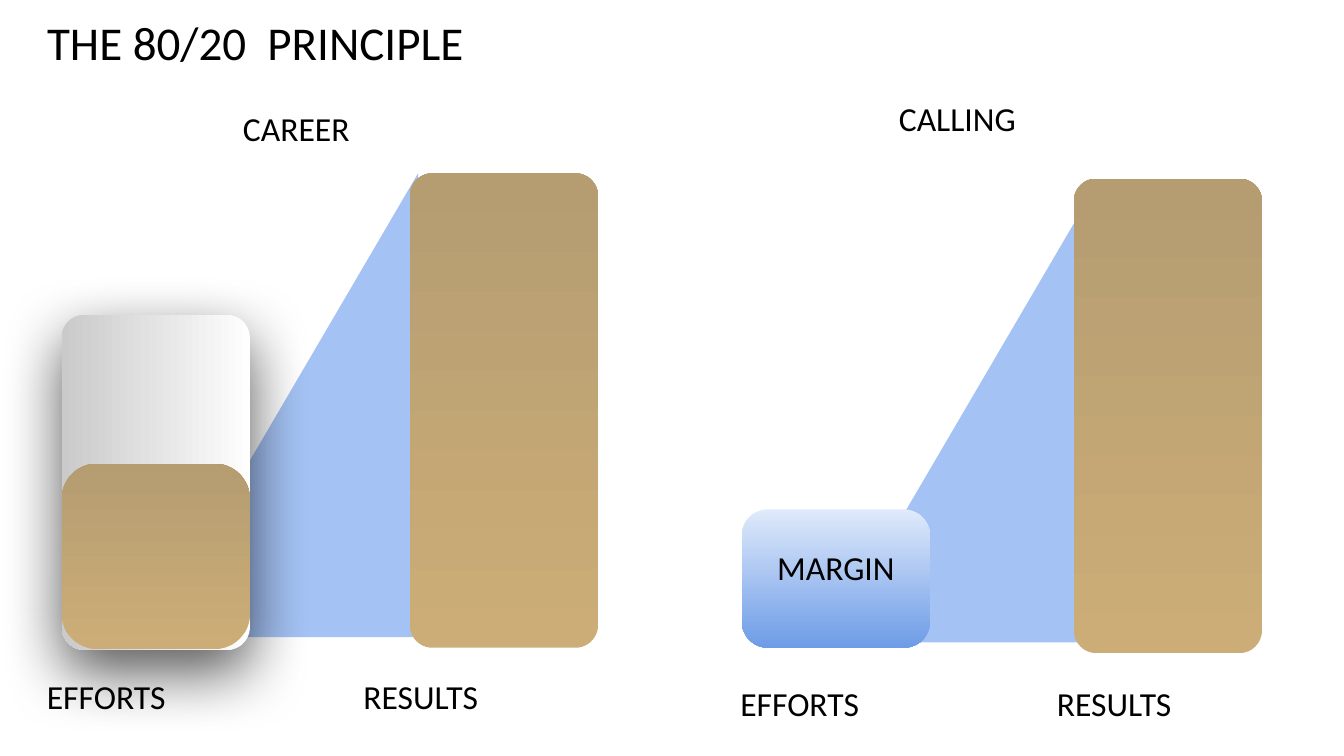
"""Build the 80/20 principle slide comparing career and calling."""
import dataclasses

import lxml.etree
import pptx
import pptx.dml.color
import pptx.enum.shapes
import pptx.enum.text
import pptx.oxml
import pptx.oxml.ns
import pptx.util

PX = 4572
INSET = 20 * PX
TAB = 471 * PX
ALIGN = pptx.enum.text.PP_ALIGN
FIT = pptx.enum.text.MSO_AUTO_SIZE
RGB = pptx.dml.color.RGBColor.from_string


@dataclasses.dataclass(frozen=True)
class Theme:
    font: str = "Calibri"
    ink: str = "000000"
    ramp: str = "A4C2F4"
    gold: tuple = ("CCAD77", "B59D71", 90)
    gray: tuple = ("FEFEFE", "CACACA", 180)
    blue: tuple = ("DFEAFB", "6E9CE7", 270)
    head: float = 25.2
    body: int = 18


theme = Theme()


def write(shape, text, size, align=ALIGN.LEFT):
    frame = shape.text_frame
    frame.word_wrap = True
    frame.margin_left = frame.margin_right = INSET
    frame.margin_top = frame.margin_bottom = INSET
    para = frame.paragraphs[0]
    para.alignment = align
    run = para.add_run()
    run.text = text
    run.font.name = theme.font
    run.font.size = pptx.util.Pt(size)
    run.font.color.rgb = RGB(theme.ink)
    return frame


def draw_bar(slide, box, bend, paint):
    kind = pptx.enum.shapes.MSO_SHAPE.ROUNDED_RECTANGLE
    bar = slide.shapes.add_shape(kind, *[n * PX for n in box])
    bar.adjustments[0] = bend
    bar.shadow.inherit = False
    bar.line.fill.background()
    start, end, angle = paint
    bar.fill.gradient()
    bar.fill.gradient_angle = angle
    for stop, tint in zip(bar.fill.gradient_stops, (start, end)):
        stop.color.rgb = RGB(tint)
    return bar


deck = pptx.Presentation()
deck.slide_width, deck.slide_height = 2000 * PX, 1125 * PX
slide = deck.slides.add_slide(deck.slide_layouts[5])

title = slide.shapes.title
title.left, title.top, title.width, title.height = 50 * PX, 0, 1864 * PX, 125 * PX
frame = write(title, "THE 80/20  PRINCIPLE", theme.head)
frame.auto_size = FIT.NONE
frame.vertical_anchor = pptx.enum.text.MSO_ANCHOR.MIDDLE

panels = [
    (
        (218, 258),
        [
            ((92, 469, 280, 498), 0.12, theme.gray),
            ((92, 690, 280, 276), 0.19, theme.gold),
            ((610, 258, 280, 706), 0.12, theme.gold),
        ],
        [
            ("EFFORTS\tRESULTS", (50, 986, 1010, 100), ALIGN.LEFT),
            ("CAREER", (342, 141, 280, 100), ALIGN.LEFT),
        ],
    ),
    (
        (1233, 266),
        [
            ((1104, 758, 280, 206), 0.19, theme.blue),
            ((1598, 266, 280, 706), 0.12, theme.gold),
        ],
        [
            ("MARGIN", (1104, 794, 280, 100), ALIGN.CENTER),
            ("CALLING", (1318, 126, 280, 100), ALIGN.LEFT),
            ("EFFORTS\tRESULTS", (1082, 997, 1010, 100), ALIGN.LEFT),
        ],
    ),
]

for (left, top), bars, labels in panels:
    right, base = left + 404, top + 690
    path = slide.shapes.build_freeform(right, top, scale=PX)
    path.add_line_segments([(right, base), (left, base)], close=True)
    ramp = path.convert_to_shape()
    ramp.shadow.inherit = False
    ramp.fill.solid()
    ramp.fill.fore_color.rgb = RGB(theme.ramp)
    ramp.line.fill.background()

    for box, bend, paint in bars:
        bar = draw_bar(slide, box, bend, paint)
        if paint == theme.gray:
            glow = pptx.oxml.parse_xml(
                f'<a:outerShdw {pptx.oxml.ns.nsdecls("a")} blurRad="431800" '
                'dist="152400" dir="5400000" algn="ctr" rotWithShape="0">'
                f'<a:srgbClr val="{theme.ink}"><a:alpha val="66000"/></a:srgbClr>'
                "</a:outerShdw>"
            )
            bar.element.spPr.find(pptx.oxml.ns.qn("a:effectLst")).append(glow)

    for text, box, align in labels:
        label = slide.shapes.add_textbox(*[n * PX for n in box])
        frame = write(label, text, theme.body, align)
        frame.auto_size = FIT.SHAPE_TO_FIT_TEXT
        if "\t" in text:
            props = frame.paragraphs[0]._p.get_or_add_pPr()
            tabs = lxml.etree.SubElement(props, pptx.oxml.ns.qn("a:tabLst"))
            tab = lxml.etree.SubElement(tabs, pptx.oxml.ns.qn("a:tab"))
            tab.set("pos", str(TAB))
            tab.set("algn", "l")

deck.save("out.pptx")
